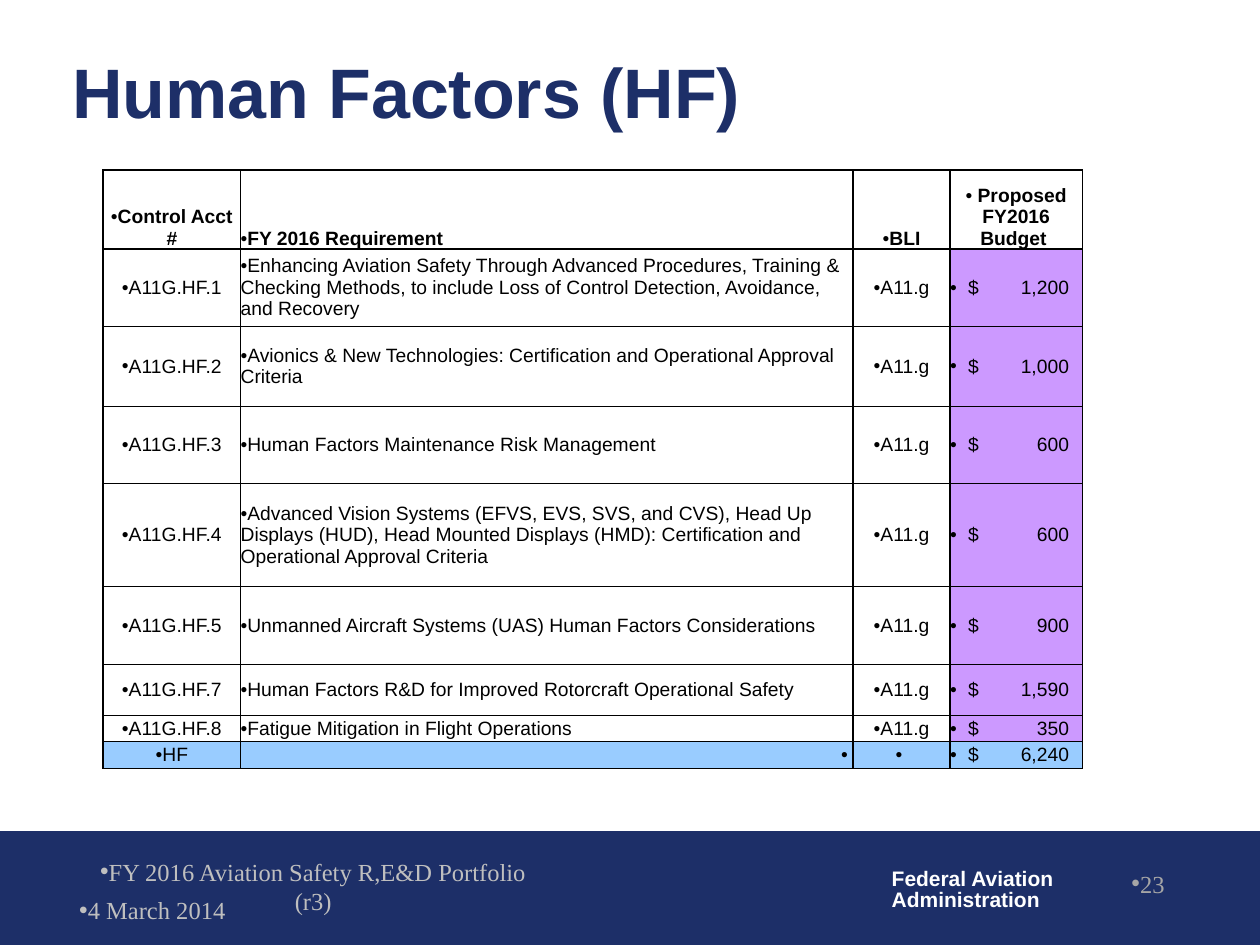
from lxml import etree
from pptx import Presentation
from pptx import util as u
from pptx.dml import color
from pptx.enum import shapes, text
from pptx.oxml import ns

NAVY, WHITE, BLACK = "1D2F68", "FFFFFF", "000000"
PURPLE, SKY, SILVER, GREY = "CC99FF", "99CCFF", "BFBFBF", "A6A6A6"
LEFT, CENTER, RIGHT = text.PP_ALIGN.LEFT, text.PP_ALIGN.CENTER, text.PP_ALIGN.RIGHT
MIDDLE, BOTTOM = text.MSO_ANCHOR.MIDDLE, text.MSO_ANCHOR.BOTTOM

COLUMN_WIDTHS = [78.5, 350, 55.5, 75.5]
ROW_HEIGHTS = [45.2, 44, 46, 44, 59, 44.5, 29.2, 14.6, 15.6]
HEADER = ["Control Acct #", "FY 2016 Requirement", "BLI", " Proposed FY2016 Budget "]
REQUIREMENTS = [
    ("1", "Enhancing Aviation Safety Through Advanced Procedures, Training & Checking "
          "Methods, to include Loss of Control Detection, Avoidance, and Recovery", "1,200"),
    ("2", "Avionics & New Technologies: Certification and Operational Approval Criteria", "1,000"),
    ("3", "Human Factors Maintenance Risk Management", "600"),
    ("4", "Advanced Vision Systems (EFVS, EVS, SVS, and CVS), Head Up Displays (HUD), "
          "Head Mounted Displays (HMD): Certification and Operational Approval Criteria", "600"),
    ("5", "Unmanned Aircraft Systems (UAS) Human Factors Considerations", "900"),
    ("7", "Human Factors R&D for Improved Rotorcraft Operational Safety", "1,590"),
    ("8", "Fatigue Mitigation in Flight Operations", "350"),
]


def rgb(value):
    """Return the colour for a hex string."""
    return color.RGBColor.from_string(value)


def child(parent, tag, **attributes):
    """Append a DrawingML element to a parent."""
    return etree.SubElement(parent, ns.qn("a:" + tag), attributes)


class SlideBuilder:
    """Hold the style and the current slide."""

    def __init__(self, presentation):
        """Start a title-only slide."""
        self.heading_font, self.footer_font = "Arial", "Times New Roman"
        self.slide = presentation.slides.add_slide(presentation.slide_layouts[5])

    def add_run(self, paragraph, words, font, size, hue, bold=False, align=LEFT, bullet=False, tabs=()):
        """Fill a paragraph with one styled run."""
        properties = paragraph._p.get_or_add_pPr()
        if bullet:
            properties.set("marL", "0")
            properties.set("indent", "0")
            child(properties, "buFont", typeface="Arial")
            child(properties, "buChar", char="•")
        if tabs:
            stops = child(properties, "tabLst")
            for position, kind in tabs:
                child(stops, "tab", pos=str(int(u.Pt(position))), algn=kind)
        paragraph.alignment = align
        run = paragraph.add_run()
        run.text = words
        run.font.name, run.font.size, run.font.bold = font, u.Pt(size), bold
        run.font.color.rgb = rgb(hue)

    def title(self, words, left, top, width, height):
        """Place and format the title placeholder."""
        shape = self.slide.shapes.title
        shape.left, shape.top, shape.width, shape.height = map(u.Pt, (left, top, width, height))
        frame = shape.text_frame
        frame.vertical_anchor, frame.auto_size = MIDDLE, text.MSO_AUTO_SIZE.NONE
        self.add_run(frame.paragraphs[0], words, self.heading_font, 40, NAVY, True)

    def band(self, left, top, width, height, fill):
        """Draw a filled rectangle."""
        shape = self.slide.shapes.add_shape(
            shapes.MSO_SHAPE.RECTANGLE, *map(u.Pt, (left, top, width, height)))
        shape.shadow.inherit = False
        shape.fill.solid()
        shape.fill.fore_color.rgb = shape.line.color.rgb = rgb(fill)
        shape.line.width = u.Pt(0.75)

    def frame(self, left, top, width, height, wrap=True):
        """Add an empty text box and return its frame."""
        frame = self.slide.shapes.add_textbox(*map(u.Pt, (left, top, width, height))).text_frame
        frame.word_wrap = wrap
        return frame

    def footer(self, words, left, top, width, height, hue, align=LEFT):
        """Add a bulleted footer text."""
        paragraph = self.frame(left, top, width, height).paragraphs[0]
        self.add_run(paragraph, words, self.footer_font, 14, hue, align=align, bullet=True)

    def agency(self, lines, left, top, width, height):
        """Add the agency name, one paragraph a line."""
        frame = self.frame(left, top, width, height, wrap=False)
        for index, line in enumerate(lines):
            paragraph = frame.add_paragraph() if index else frame.paragraphs[0]
            paragraph.line_spacing = 0.85
            self.add_run(paragraph, line, self.heading_font, 12, WHITE, True)

    def table(self, left, top, widths, heights):
        """Add an unstyled table of the given grid."""
        table = self.slide.shapes.add_table(
            len(heights), len(widths), *map(u.Pt, (left, top, sum(widths), sum(heights)))).table
        table.first_row = table.horz_banding = False
        for column, width in zip(table.columns, widths):
            column.width = u.Pt(width)
        for row, height in zip(table.rows, heights):
            row.height = u.Pt(height)
        return table

    def cell(self, cell, words, fill, edges, anchor=MIDDLE, **style):
        """Put text, borders and fill in one table cell."""
        cell.margin_left = cell.margin_right = cell.margin_top = cell.margin_bottom = 0
        cell.vertical_anchor = anchor
        self.add_run(cell.text_frame.paragraphs[0], words, self.heading_font, 11, BLACK, bullet=True, **style)
        for tag, width in zip(("lnL", "lnR", "lnT", "lnB"), edges):
            line = child(cell._tc.get_or_add_tcPr(), tag, w=str(int(u.Pt(width))))
            child(child(line, "solidFill"), "srgbClr", val=BLACK)
        if fill:
            cell.fill.solid()
            cell.fill.fore_color.rgb = rgb(fill)
        else:
            cell.fill.background()


def budget(amount):
    """Return a dollar amount laid out on two tab stops."""
    return f"\t$\t{amount}"


def main():
    """Build the slide and save it."""
    presentation = Presentation()
    presentation.slide_width, presentation.slide_height = u.Pt(720), u.Pt(540)
    builder = SlideBuilder(presentation)
    builder.band(0, 475.2, 720, 64.4, NAVY)
    builder.agency(["Federal Aviation", "Administration"], 502.5, 493.2, 108, 31.7)
    builder.title("Human Factors (HF)", 34, 27.4, 667.4, 48.2)
    builder.footer("23", 522.7, 492.8, 149.8, 36, GREY, RIGHT)
    builder.footer("4 March 2014", 38.2, 508, 105, 21, SILVER)
    builder.footer("FY 2016 Aviation Safety R,E&D Portfolio (r3)", 38.2, 486, 281.5, 24.5, SILVER, CENTER)

    rows = [HEADER]
    rows += [[f"A11G.HF.{number}", name, "A11.g", budget(amount)] for number, name, amount in REQUIREMENTS]
    rows.append(["HF", " ", " ", budget("6,240")])
    last = len(rows) - 1
    table = builder.table(59, 97.2, COLUMN_WIDTHS, ROW_HEIGHTS)
    for row, values in enumerate(rows):
        edges = (1, 1, 1 if row < 2 else 0.5, 1 if row in (0, last) else 0.5)
        for column, words in enumerate(values):
            amount = column == 3 and row > 0
            fill = SKY if row == last else PURPLE if amount else None
            align = LEFT if column == 1 or amount else CENTER
            if row == last and column == 1:
                align = RIGHT
            builder.cell(table.cell(row, column), words, fill, edges, BOTTOM if row == 0 else MIDDLE,
                         bold=row == 0, align=align,
                         tabs=[(10.3, "l"), (68, "r")] if amount else ())
    presentation.save("out.pptx")


if __name__ == "__main__":
    main()
